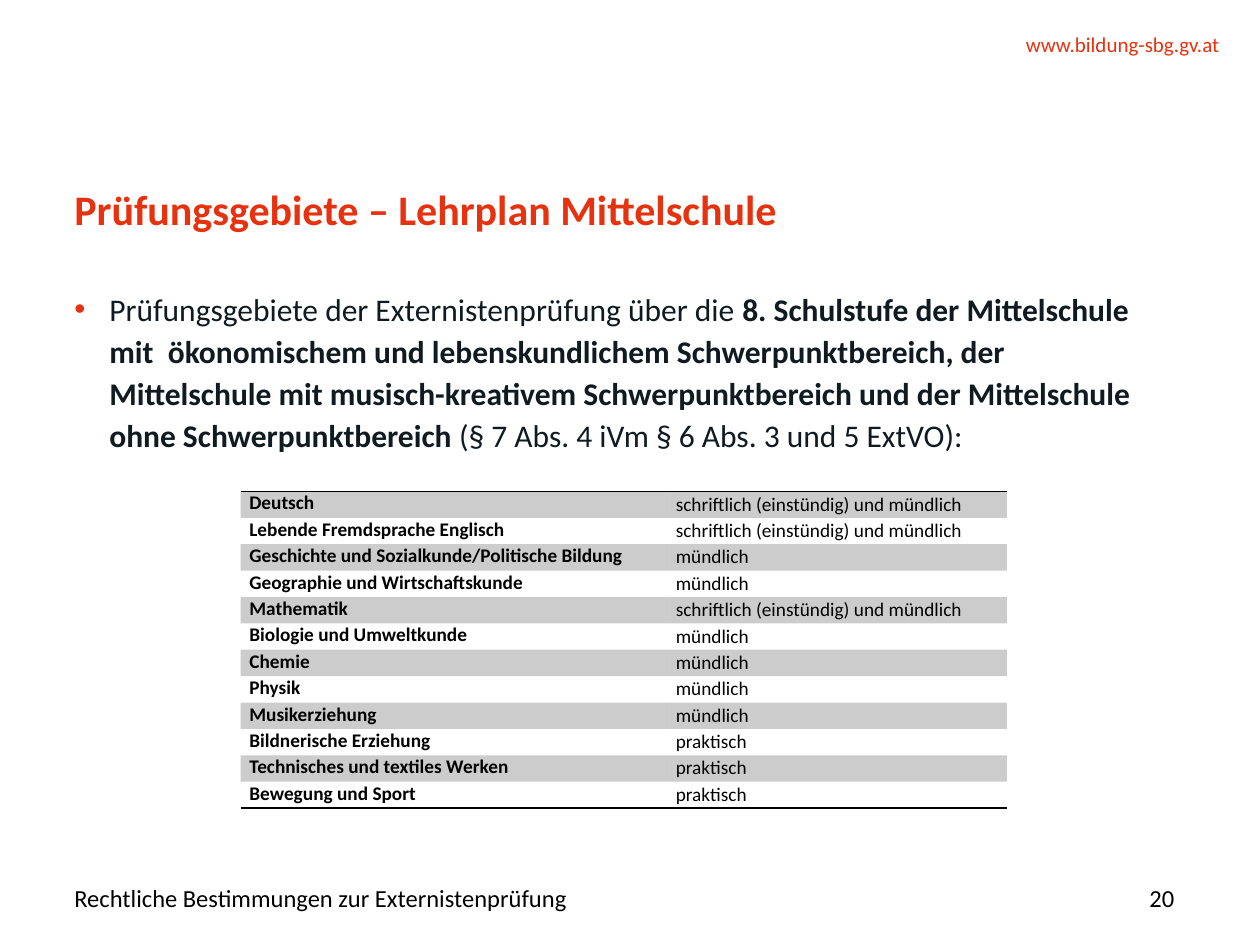
from lxml.etree import SubElement
from pptx import Presentation
from pptx.dml.color import RGBColor
from pptx.enum.text import MSO_ANCHOR, MSO_AUTO_SIZE, PP_ALIGN
from pptx.oxml import parse_xml
from pptx.oxml.ns import nsdecls, qn
from pptx.util import Pt

FONT = "Calibri"
RED, INK, BLACK = "E6320F", "0F1B20", "000000"
NO_STYLE = "{2D5ABB26-0587-4C30-8999-92F81FD0307C}"

WRITTEN, ORAL, PRACTICAL = "schriftlich (einstündig) und mündlich", "mündlich", "praktisch"
SUBJECTS = [
    ("Deutsch", WRITTEN),
    ("Lebende Fremdsprache Englisch", WRITTEN),
    ("Geschichte und Sozialkunde/Politische Bildung", ORAL),
    ("Geographie und Wirtschaftskunde", ORAL),
    ("Mathematik", WRITTEN),
    ("Biologie und Umweltkunde", ORAL),
    ("Chemie", ORAL),
    ("Physik", ORAL),
    ("Musikerziehung", ORAL),
    ("Bildnerische Erziehung", PRACTICAL),
    ("Technisches und textiles Werken", PRACTICAL),
    ("Bewegung und Sport", PRACTICAL),
]
INTRO = [
    ("Prüfungsgebiete der Externistenprüfung über die ", False),
    ("8. Schulstufe der Mittelschule mit  ökonomischem und lebenskundlichem "
     "Schwerpunktbereich, der Mittelschule mit musisch-kreativem Schwerpunktbereich "
     "und der Mittelschule ohne Schwerpunktbereich ", True),
    ("(§ 7 Abs. 4 iVm § 6 Abs. 3 und 5 ExtVO):", False),
]


def rgb(color):
    return RGBColor.from_string(color)


def add_run(p, text, size, color, bold=False):
    r = p.add_run()
    r.text = text
    r.font.name = FONT
    r.font.size = Pt(size)
    r.font.bold = bold
    r.font.color.rgb = rgb(color)


def place(sp, box, anchor=MSO_ANCHOR.TOP):
    sp.left, sp.top, sp.width, sp.height = map(Pt, box)
    tf = sp.text_frame
    tf.margin_left = tf.margin_top = tf.margin_right = tf.margin_bottom = 0
    tf.word_wrap = True
    tf.auto_size = MSO_AUTO_SIZE.NONE
    tf.vertical_anchor = anchor
    return tf.paragraphs[0]


def add_label(s, box, text, size, color, align=PP_ALIGN.LEFT, anchor=MSO_ANCHOR.MIDDLE):
    p = place(s.shapes.add_textbox(*map(Pt, box)), box, anchor)
    p.alignment = align
    add_run(p, text, size, color)


def add_title(s, box):
    p = place(s.shapes.title, box)
    p.alignment = PP_ALIGN.LEFT
    p.line_spacing = Pt(30)
    add_run(p, "Prüfungsgebiete – Lehrplan Mittelschule", 24, RED, True)


def add_intro(s, box):
    p = place(s.placeholders[1], box)
    pPr = p._p.get_or_add_pPr()
    pPr.set("marL", str(Pt(20)))
    pPr.set("indent", str(-Pt(20)))
    SubElement(SubElement(pPr, qn("a:buClr")), qn("a:srgbClr"), val=RED)
    SubElement(pPr, qn("a:buFont"), typeface="Arial")
    SubElement(pPr, qn("a:buChar"), char="•")
    p.line_spacing = Pt(24)
    p.space_before = Pt(0)
    p.space_after = Pt(14.2)
    for text, bold in INTRO:
        add_run(p, text, 18, INK, bold)


def shade(cell, color, percent):
    cell.fill.solid()
    cell.fill.fore_color.rgb = rgb(color)
    clr = cell._tc.tcPr.find(".//" + qn("a:srgbClr"))
    SubElement(clr, qn("a:alpha"), val=str(percent * 1000))


def rule(cell, side):
    cell._tc.get_or_add_tcPr().insert(0, parse_xml(
        f'<a:{side} {nsdecls("a")} w="{Pt(1)}"><a:solidFill>'
        f'<a:srgbClr val="{BLACK}"/></a:solidFill></a:{side}>'))


def add_subjects(s, box):
    table = s.shapes.add_table(len(SUBJECTS), 2, *map(Pt, box)).table
    table.first_row = table.horz_banding = False
    table._tbl.tblPr.find(qn("a:tableStyleId")).text = NO_STYLE
    for column, share in zip(table.columns, (0.56, 0.44)):
        column.width = Pt(round(box[2] * share, 2))
    for i, texts in enumerate(SUBJECTS):
        table.rows[i].height = Pt(round(box[3] / len(SUBJECTS), 2))
        for j, text in enumerate(texts):
            cell = table.cell(i, j)
            cell.margin_left, cell.margin_right = (Pt(3.5), Pt(0.7)) if j else (Pt(5), Pt(5))
            cell.margin_top = cell.margin_bottom = Pt(0.7 * j)
            if i % 2 == 0:
                shade(cell, BLACK, 20)
            else:
                cell.fill.background()
            if i == 0:
                rule(cell, "lnT")
            if i == len(SUBJECTS) - 1:
                rule(cell, "lnB")
            p = cell.text_frame.paragraphs[0]
            p.alignment = PP_ALIGN.JUSTIFY
            add_run(p, text, 11, BLACK, j == 0)


def add_footer(s, box):
    left, top, width, height = box
    number = 64
    add_label(s, (left, top, width - number - 23, height),
              "Rechtliche Bestimmungen zur Externistenprüfung", 14, BLACK)
    add_label(s, (left + width - number, top, number, height), "20", 14, BLACK, PP_ALIGN.RIGHT)


def main():
    prs = Presentation()
    prs.slide_width, prs.slide_height = Pt(720), Pt(540)
    s = prs.slides.add_slide(prs.slide_layouts[1])
    add_label(s, (523.4, 18, 173.5, 14.4), "www.bildung-sbg.gv.at", 12, RED,
              PP_ALIGN.RIGHT, MSO_ANCHOR.TOP)
    add_title(s, (42.5, 103.7, 628.6, 65.5))
    add_intro(s, (42.5, 163.4, 628.6, 308.9))
    add_footer(s, (42.5, 502.6, 628.6, 20.9))
    add_subjects(s, (137.5, 280.8, 437.8, 181.2))
    prs.save("out.pptx")


if __name__ == "__main__":
    main()
